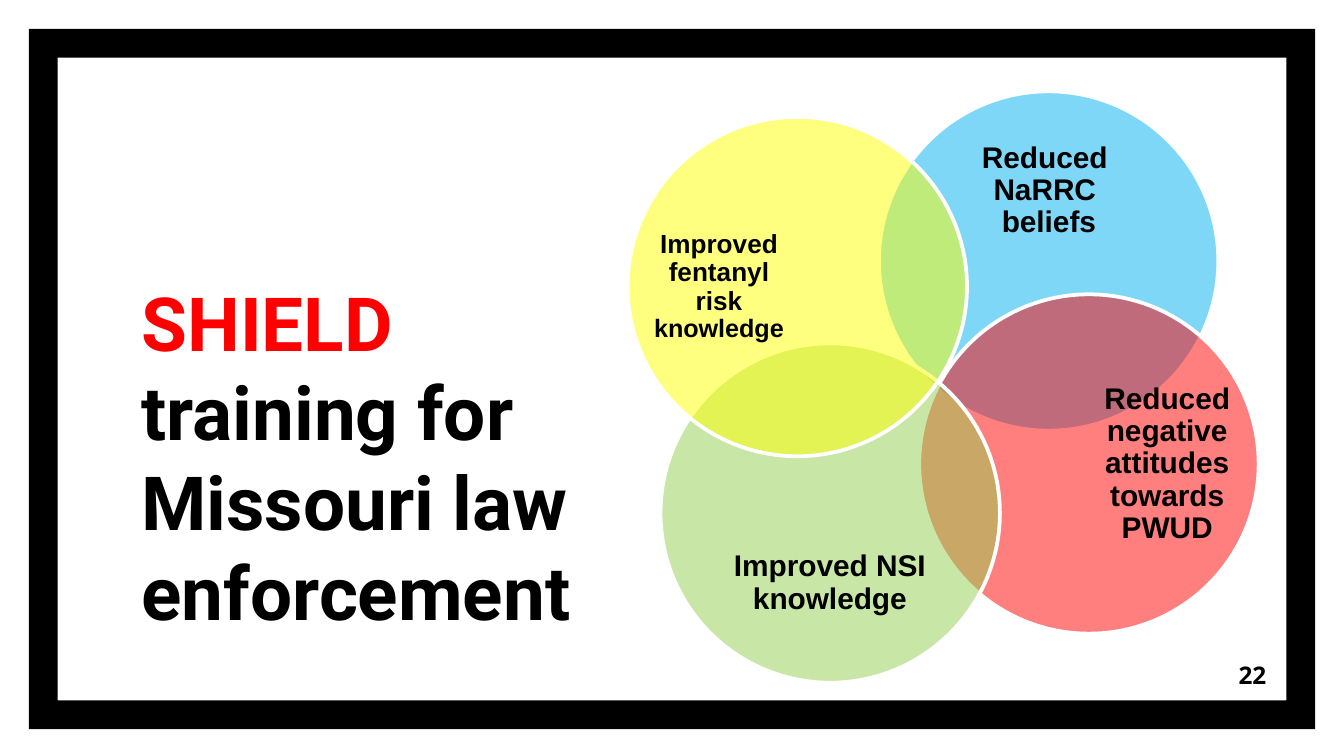
from lxml import etree
from pptx import Presentation
from pptx.dml.color import RGBColor
from pptx.enum.shapes import MSO_SHAPE
from pptx.enum.text import MSO_ANCHOR, PP_ALIGN
from pptx.oxml.ns import qn
from pptx.util import Pt

PX = 4572  # 200 px to the inch
FRAME, OVAL = MSO_SHAPE.FRAME, MSO_SHAPE.OVAL
MID, LOW = MSO_ANCHOR.MIDDLE, MSO_ANCHOR.BOTTOM
LEFT, RIGHT, CENTER = PP_ALIGN.LEFT, PP_ALIGN.RIGHT, PP_ALIGN.CENTER
SIDES = ("left", "top", "right", "bottom")

HEAD = {"name": "Roboto", "size": Pt(40), "bold": True}
PAGE = {"name": "Noto Sans", "size": Pt(13), "bold": True}
LABEL = {"name": "Arial", "size": Pt(16), "bold": True}
SMALL = {**LABEL, "size": Pt(14)}
LAST = {**LABEL, "size": Pt(13.5)}

DISC = 505  # circle diameter
# Circle offset, colour, label box, label runs; from back to front
DISCS = [
    ((374, 0), "00B0F0", (433, 68, 388, 160),
     [("Reduced \nNaRRC \nbeliefs", LABEL)]),
    ((434, 302), "FF0000", (706, 361, 194, 388),
     [("Reduced negative attitudes towards PWUD", LABEL)]),
    ((49, 375), "92D050", (107, 652, 388, 160),
     [("Improved NSI knowledge", LABEL)]),
    ((0, 38), "FFFF00", (39, 97, 194, 388),
     [("Improved fentanyl risk ", SMALL), ("knowledge", LAST)]),
]


def emu(*vals):
    return [v * PX for v in vals]


def paint(target, color):
    """Give a fill or a font one solid colour."""
    if hasattr(target, "solid"):
        target.solid()
        target = target.fore_color
    else:
        target = target.color
    target.rgb = RGBColor.from_string(color)


def shape(shapes, kind, box, color):
    item = shapes.add_shape(kind, *emu(*box))
    item.shadow.inherit = False
    paint(item.fill, color)
    item.line.fill.background()
    return item


def write(shapes, box, runs, align, anchor, inset=0, space=None):
    """Place a text box; runs are (text, format) or (text, format, colour)."""
    frame = shapes.add_textbox(*emu(*box)).text_frame
    frame.word_wrap = True
    frame.vertical_anchor = anchor
    for side in SIDES:
        setattr(frame, f"margin_{side}", inset * PX)
    para = frame.paragraphs[0]
    para.alignment = align
    para.line_spacing = space
    for text, style, *color in runs:
        for i, line in enumerate(text.split("\n")):
            if i:
                para.add_line_break()
            run = para.add_run()
            run.text = line
            for key, val in style.items():
                setattr(run.font, key, val)
            paint(run.font, *(color or ["000000"]))


def border(shapes, box):
    item = shape(shapes, FRAME, box, "000000")
    item.adjustments[0] = 0.041


def title(shapes, box):
    runs = [("SHIELD ", HEAD, "FF0000"),
            ("training for Missouri law enforcement", HEAD)]
    write(shapes, box, runs, LEFT, LOW, inset=20)


def number(shapes, box):
    write(shapes, box, [("22", PAGE)], RIGHT, MID, inset=20)


def venn(shapes, left, top):
    group = shapes.add_group_shape().shapes
    for (x, y), color, (lx, ly, w, h), runs in DISCS:
        disc = shape(group, OVAL, (left + x, top + y, DISC, DISC), color)
        # Half transparent fill
        tint = disc.fill._xPr.find(f"{qn('a:solidFill')}/{qn('a:srgbClr')}")
        etree.SubElement(tint, qn("a:alpha")).set("val", "50000")
        paint(disc.line.fill, "FFFFFF")
        disc.line.width = Pt(2)
        write(group, (left + lx, top + ly, w, h), runs, CENTER, MID, space=0.9)


def main():
    deck = Presentation()
    deck.slide_width, deck.slide_height = emu(2000, 1125)
    shapes = deck.slides.add_slide(deck.slide_layouts[6]).shapes
    border(shapes, (43, 43, 1914, 1042))
    title(shapes, (191, 667, 766, 298))
    number(shapes, (1784, 961, 120, 86))
    venn(shapes, 934, 136)
    deck.save("out.pptx")


if __name__ == "__main__":
    main()
